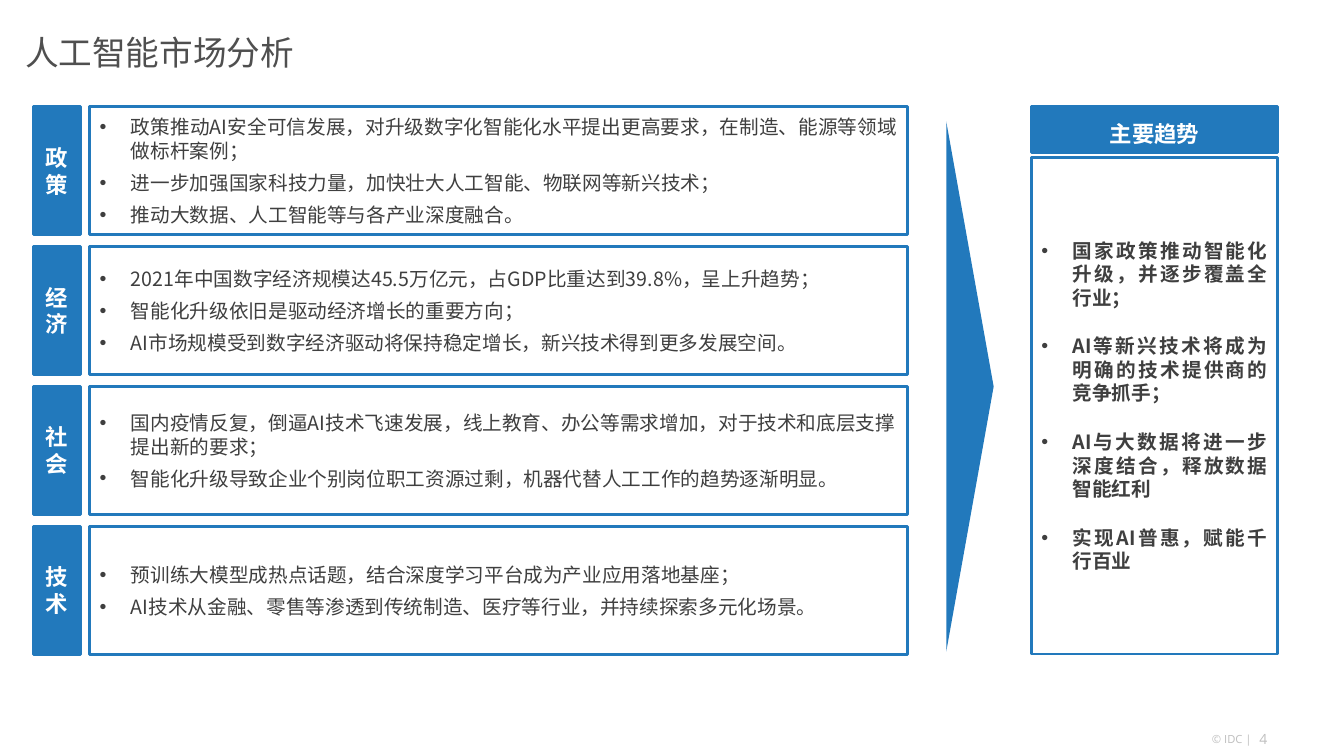
from dataclasses import dataclass

from lxml.etree import SubElement
from pptx import Presentation
from pptx.dml.color import RGBColor
from pptx.enum.shapes import MSO_SHAPE
from pptx.enum.text import MSO_ANCHOR, PP_ALIGN
from pptx.oxml.ns import qn
from pptx.shapes.autoshape import Shape
from pptx.text.text import TextFrame, _Paragraph
from pptx.util import Inches, Pt

BLUE, WHITE, DARK, TITLE_GRAY, FOOTER_GRAY = "2279BC", "FFFFFF", "3F3F3F", "4F4F4F", "BFBFBF"
CJK_FONT, FOOTER_FONT = "Noto Sans CJK SC", "Open Sans"
TOP, FACTOR_HEIGHT, FACTOR_STEP = 1.06, 1.27, 1.387
TREND_LEFT, TREND_WIDTH = 10.23, 2.44


@dataclass
class Factor:
    label: str
    points: list[str]
    align: PP_ALIGN = PP_ALIGN.JUSTIFY


FACTORS = [
    Factor("政策", [
        "政策推动AI安全可信发展，对升级数字化智能化水平提出更高要求，在制造、能源等领域做标杆案例；",
        "进一步加强国家科技力量，加快壮大人工智能、物联网等新兴技术；",
        "推动大数据、人工智能等与各产业深度融合。",
    ]),
    Factor("经济", [
        "2021年中国数字经济规模达45.5万亿元，占GDP比重达到39.8%，呈上升趋势；",
        "智能化升级依旧是驱动经济增长的重要方向；",
        "AI市场规模受到数字经济驱动将保持稳定增长，新兴技术得到更多发展空间。",
    ]),
    Factor("社会", [
        "国内疫情反复，倒逼AI技术飞速发展，线上教育、办公等需求增加，对于技术和底层支撑提出新的要求；",
        "智能化升级导致企业个别岗位职工资源过剩，机器代替人工工作的趋势逐渐明显。",
    ], PP_ALIGN.LEFT),
    Factor("技术", [
        "预训练大模型成热点话题，结合深度学习平台成为产业应用落地基座；",
        "AI技术从金融、零售等渗透到传统制造、医疗等行业，并持续探索多元化场景。",
    ]),
]
TRENDS = [
    "国家政策推动智能化升级，并逐步覆盖全行业；",
    "AI等新兴技术将成为明确的技术提供商的竞争抓手；",
    "AI与大数据将进一步深度结合，释放数据智能红利",
    "实现AI普惠，赋能千行百业",
]


def color(value: str) -> RGBColor:
    return RGBColor.from_string(value)


def set_font(paragraph: _Paragraph, size: float, ink: str, bold: bool = False,
             name: str = CJK_FONT) -> None:
    font = paragraph.font
    font.name, font.size, font.bold = name, Pt(size), bold
    font.color.rgb = color(ink)


def add_box(left: float, top: float, width: float, height: float, filled: bool) -> Shape:
    box = slide.shapes.add_shape(MSO_SHAPE.RECTANGLE, Inches(left), Inches(top),
                                 Inches(width), Inches(height))
    box.shadow.inherit = False
    if filled:
        box.fill.solid()
        box.fill.fore_color.rgb = color(BLUE)
    else:
        box.fill.background()
    box.line.color.rgb = color(BLUE)
    box.line.width = Pt(2)
    box.text_frame.word_wrap = True
    box.text_frame.vertical_anchor = MSO_ANCHOR.MIDDLE
    return box


def add_heading(text: str, left: float, top: float, width: float, height: float) -> TextFrame:
    frame = add_box(left, top, width, height, filled=True).text_frame
    frame.text = text
    frame.paragraphs[0].alignment = PP_ALIGN.CENTER
    set_font(frame.paragraphs[0], 16, WHITE, bold=True)
    return frame


def add_bullets(frame: TextFrame, points: list[str], align: PP_ALIGN,
                before: float = 0, bold: bool = False) -> None:
    frame.text = "\n".join(points)
    for index, paragraph in enumerate(frame.paragraphs):
        paragraph.alignment = align
        paragraph.space_before = Pt(before if index else 0)
        paragraph.space_after = Pt(6)
        properties = paragraph._p.get_or_add_pPr()
        properties.set("marL", str(Inches(0.31)))
        properties.set("indent", str(Inches(-0.31)))
        SubElement(properties, qn("a:buFont"), typeface="Arial")
        SubElement(properties, qn("a:buChar"), char="•")
        set_font(paragraph, 14, DARK, bold)


def add_line_of_text(text: str, left: float, top: float, width: float, height: float,
                     size: float, ink: str, name: str) -> None:
    frame = slide.shapes.add_textbox(Inches(left), Inches(top),
                                     Inches(width), Inches(height)).text_frame
    frame.margin_left = frame.margin_right = frame.margin_top = frame.margin_bottom = 0
    frame.word_wrap = True
    frame.vertical_anchor = MSO_ANCHOR.MIDDLE
    frame.text = text
    set_font(frame.paragraphs[0], size, ink, name=name)


presentation = Presentation()
presentation.slide_width, presentation.slide_height = Inches(13.33), Inches(7.5)
slide = presentation.slides.add_slide(presentation.slide_layouts[6])

# Title and footer
add_line_of_text("人工智能市场分析", 0.25, 0, 11.83, 1.03, 24, TITLE_GRAY, CJK_FONT)
add_line_of_text("© IDC |", 12.02, 7.27, 0.56, 0.13, 8, FOOTER_GRAY, FOOTER_FONT)
add_line_of_text("4", 12.49, 7.25, 0.41, 0.17, 10, FOOTER_GRAY, FOOTER_FONT)

# Four market factors
for row, factor in enumerate(FACTORS):
    factor_top = TOP + row * FACTOR_STEP
    add_heading(factor.label, 0.33, factor_top, 0.47, FACTOR_HEIGHT)
    details = add_box(0.89, factor_top, 8.11, FACTOR_HEIGHT, filled=False)
    add_bullets(details.text_frame, factor.points, factor.align)

# Wedge pointing from the factors to the trends
wedge = slide.shapes.add_shape(MSO_SHAPE.ISOSCELES_TRIANGLE, Inches(6.99), Inches(3.6),
                               Inches(5.26), Inches(0.47))
wedge.rotation = 90
wedge.shadow.inherit = False
wedge.fill.solid()
wedge.fill.fore_color.rgb = color(BLUE)
wedge.line.fill.background()

# Main trends
trend_heading = add_heading("主要趋势", TREND_LEFT, TOP, TREND_WIDTH, 0.45)
trend_heading.vertical_anchor = MSO_ANCHOR.BOTTOM
trend_list = add_box(TREND_LEFT, 1.56, TREND_WIDTH, 4.93, filled=False)
add_bullets(trend_list.text_frame, TRENDS, PP_ALIGN.JUSTIFY, before=12, bold=True)

presentation.save("out.pptx")
